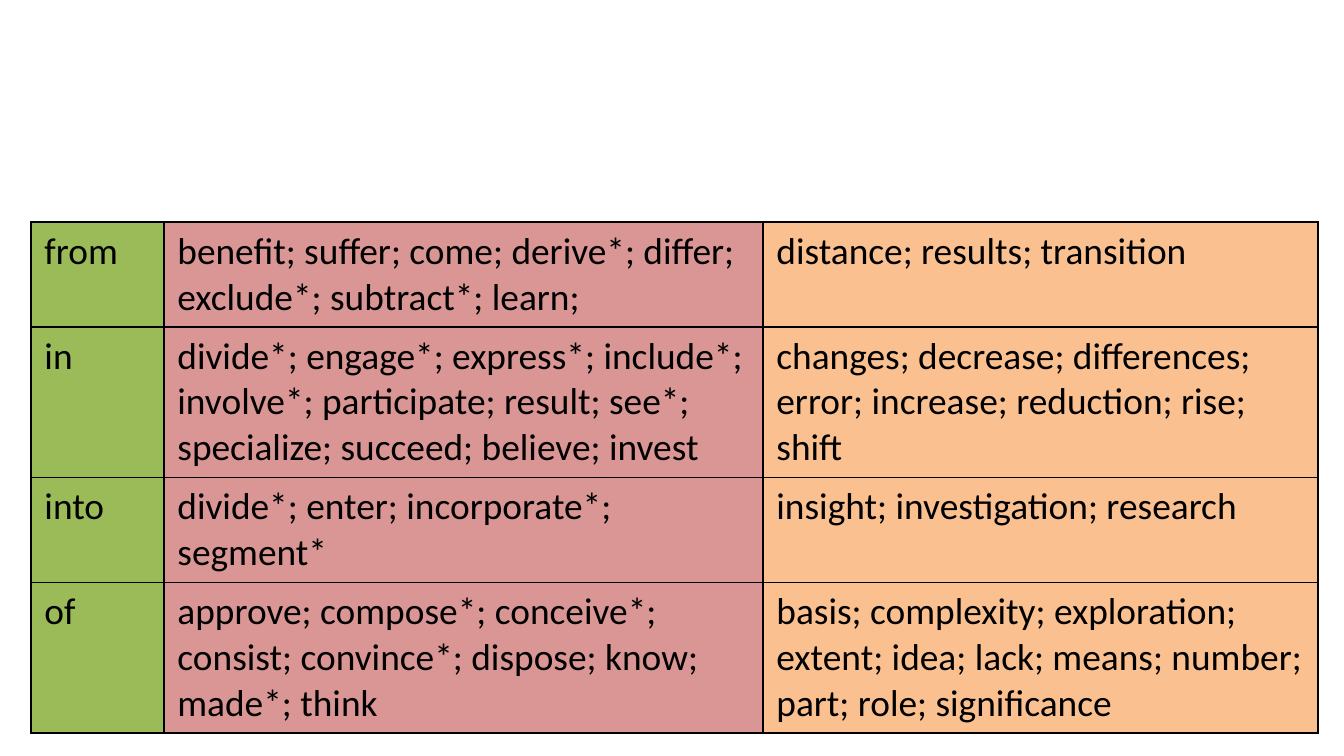
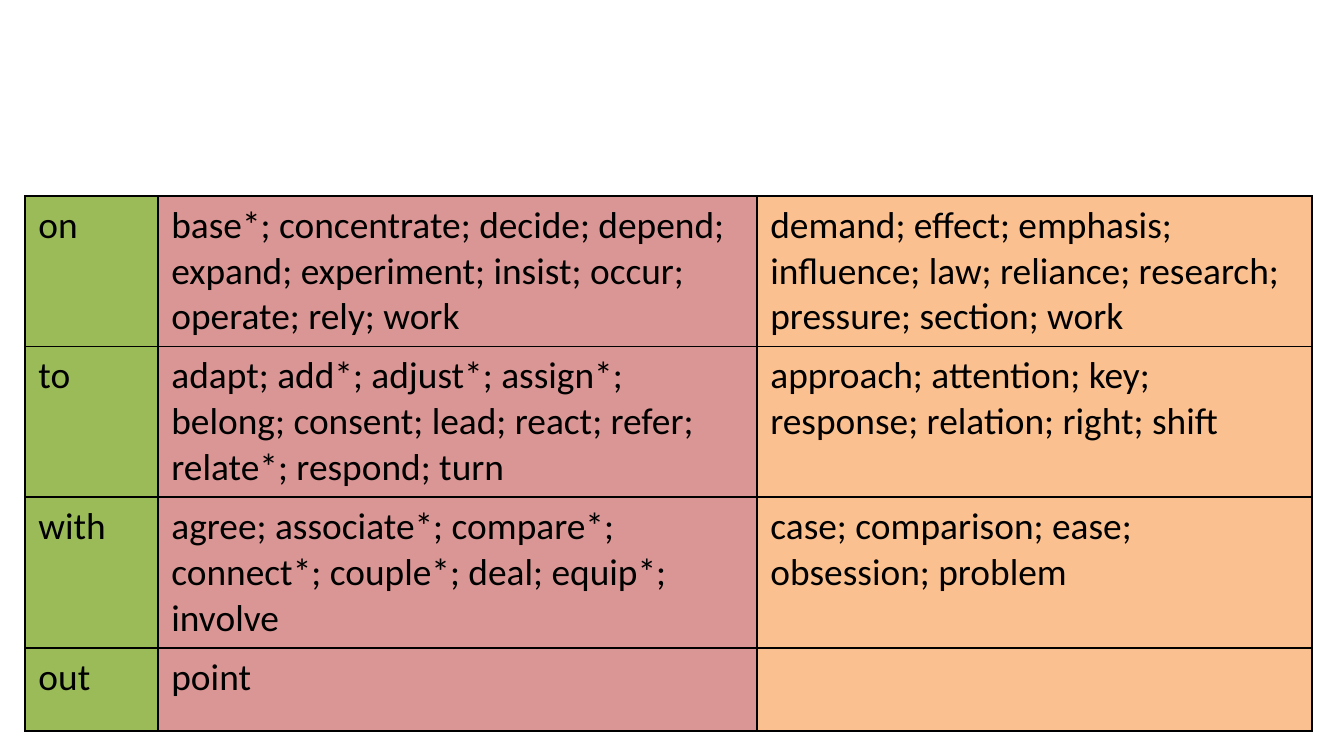
import lxml.etree
import pptx
import pptx.dml.color
import pptx.oxml.ns
import pptx.util

SCALE = 914400 / 134.4
COLORS = {
    "text": "000000",
    "border": "000000",
    "preposition": "9BBB59",
    "verbs": "D99694",
    "nouns": "FAC090",
}
COLUMNS = {"preposition": 133, "verbs": 599, "nouns": 555}

FROM_TO_OF = [
    ("from", "benefit; suffer; come; derive*; differ;\nexclude*; subtract*; learn;",
     "distance; results; transition"),
    ("in", "divide*; engage*; express*; include*; involve*; participate; result; "
           "see*; specialize; succeed; believe; invest",
     "changes; decrease; differences;\nerror; increase; reduction; rise; shift"),
    ("into", "divide*; enter; incorporate*; segment*",
     "insight; investigation; research"),
    ("of", "approve; compose*; conceive*; consist; convince*; dispose; know; "
           "made*; think",
     "basis; complexity; exploration;\nextent; idea; lack; means; number;\n"
     "part; role; significance"),
]
ON_TO_OUT = [
    ("on", "base*; concentrate; decide; depend;\nexpand; experiment; insist; occur;\n"
           "operate; rely; work",
     "demand; effect; emphasis; influence; law; reliance; research; pressure; "
     "section; work"),
    ("to", "adapt; add*; adjust*; assign*; belong; consent; lead; react; refer; "
           "relate*; respond; turn",
     "approach; attention; key; response; relation; right; shift"),
    ("with", "agree; associate*; compare*; connect*; couple*; deal; equip*; involve",
     "case; comparison; ease; obsession; problem"),
    ("out", "point", ""),
]


def px(n):
    """Turn pixels into EMU."""
    return pptx.util.Emu(round(n * SCALE))


def rgb(name):
    """Look up a named colour."""
    return pptx.dml.color.RGBColor.from_string(COLORS[name])


def write(tf, text, size=20, font="Calibri", color="text"):
    """Write text into a frame, one paragraph per line."""
    tf.text = text
    for p in tf.paragraphs:
        p.font.size = pptx.util.Pt(size)
        p.font.name = font
        for r in p.runs:
            r.font.size = pptx.util.Pt(size)
            r.font.name = font
            r.font.color.rgb = rgb(color)


def add_borders(cell, width=1, color="border"):
    """Draw a solid line on all four sides of a cell."""
    qn = pptx.oxml.ns.qn
    tc_pr = cell._tc.get_or_add_tcPr()
    for side in "LRTB":
        ln = lxml.etree.SubElement(tc_pr, qn(f"a:ln{side}"),
                                   w=str(pptx.util.Pt(width)))
        fill = lxml.etree.SubElement(ln, qn("a:solidFill"))
        lxml.etree.SubElement(fill, qn("a:srgbClr"), val=COLORS[color])


def add_word_table(slide, left, top, heights, rows):
    """Place a table of prepositions with their verbs and nouns."""
    frame = slide.shapes.add_table(len(rows), len(COLUMNS), px(left), px(top),
                                   px(sum(COLUMNS.values())), px(sum(heights)))
    table = frame.table
    table.first_row = False
    table.horz_banding = False
    for column, width in zip(table.columns, COLUMNS.values()):
        column.width = px(width)
    for row, height, words in zip(table.rows, heights, rows):
        row.height = px(height)
        for cell, text, kind in zip(row.cells, words, COLUMNS):
            add_borders(cell)
            cell.fill.solid()
            cell.fill.fore_color.rgb = rgb(kind)
            write(cell.text_frame, text)


def main():
    """Build both word-list slides."""
    prs = pptx.Presentation()
    prs.slide_width, prs.slide_height = px(1344), px(756)
    blank = prs.slide_layouts[6]
    for left, top, heights, rows in (
        (31, 222, (104, 150, 104, 150), FROM_TO_OF),
        (25, 196, (150, 150, 150, 83), ON_TO_OUT),
    ):
        add_word_table(prs.slides.add_slide(blank), left, top, heights, rows)
    prs.save("out.pptx")


if __name__ == "__main__":
    main()
